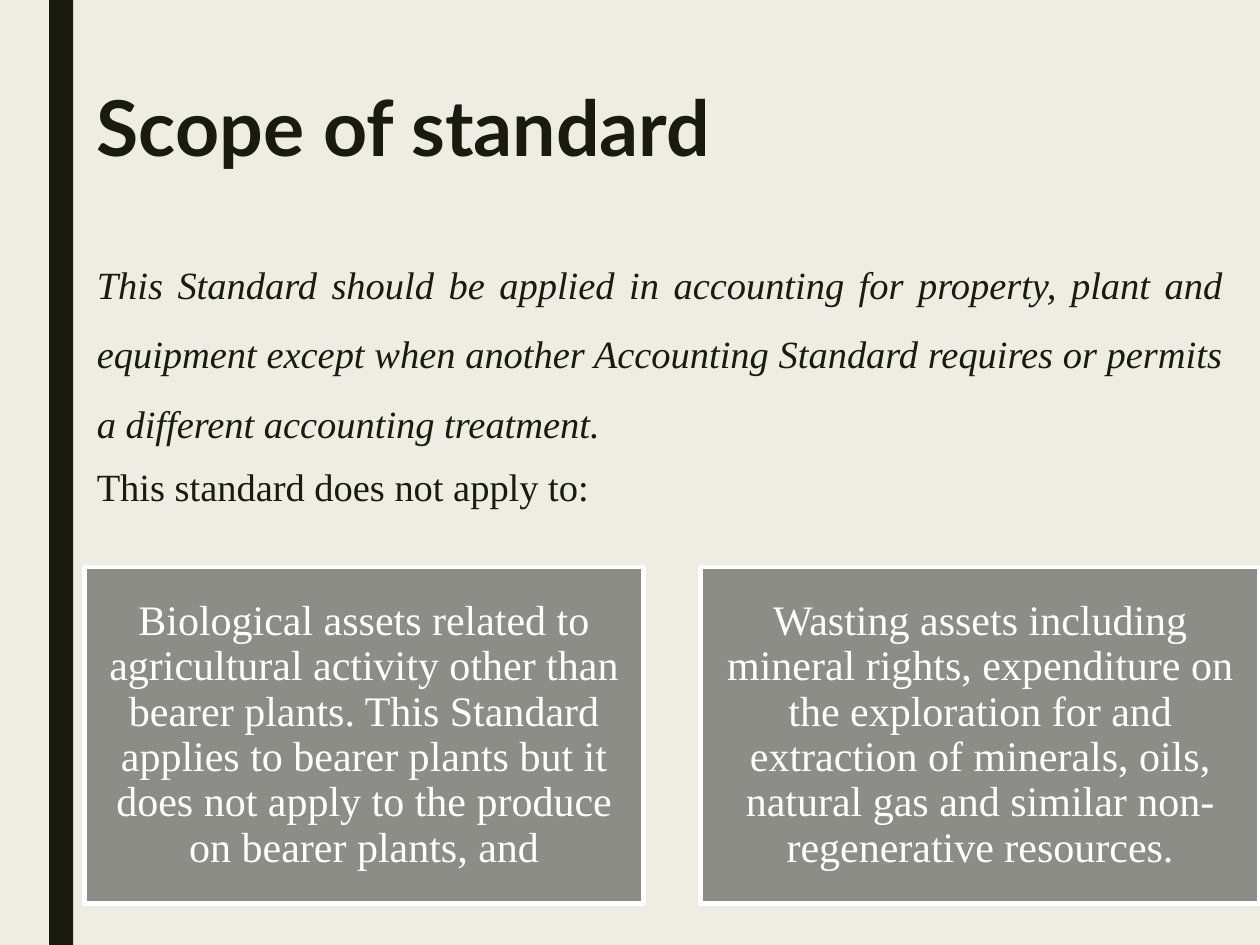
from dataclasses import dataclass
from pptx import Presentation
from pptx.dml.color import RGBColor
from pptx.enum.shapes import MSO_SHAPE
from pptx.enum.text import MSO_ANCHOR, PP_ALIGN
from pptx.util import Inches, Pt


@dataclass(frozen=True)
class Theme:
    paper: str = "EFEDE3"
    ink: str = "191B0E"
    card: str = "8C8D86"
    white: str = "FFFFFF"
    head: str = "Lato"
    serif: str = "Times New Roman"
    title: int = 44
    body: int = 22
    note: int = 24
    edge: float = 2.75


LOOK = Theme()
WIDE, HIGH = 10, 7.5
LEFT = 0.67
CARD, STEP = 4.44, 4.89

TITLE = "Scope of standard"
RULE = ("This Standard should be applied in accounting for property, plant and "
        "equipment except when another Accounting Standard requires or permits "
        "a different accounting treatment.")
LEAD = "This standard does not apply to:"
CARDS = [
    "Biological assets related to agricultural activity other than bearer plants. "
    "This Standard applies to bearer plants but it does not apply to the produce "
    "on bearer plants, and",
    "Wasting assets including mineral rights, expenditure on the exploration for "
    "and extraction of minerals, oils, natural gas and similar non-regenerative "
    "resources.",
]


def color(code):
    return RGBColor.from_string(code)


def write(para, text, face, size, ink, align, gap, bold=False, italic=False):
    para.text = text
    para.alignment = align
    para.line_spacing = gap
    font = para.runs[0].font
    font.name, font.size = face, Pt(size)
    font.bold, font.italic = bold, italic
    font.color.rgb = color(ink)


def add_text(slide, box, anchor):
    frame = slide.shapes.add_textbox(*map(Inches, box)).text_frame
    frame.word_wrap = True
    frame.vertical_anchor = anchor
    return frame


def add_rect(slide, box, fill, line=None):
    rect = slide.shapes.add_shape(MSO_SHAPE.RECTANGLE, *map(Inches, box))
    rect.shadow.inherit = False
    rect.fill.solid()
    rect.fill.fore_color.rgb = color(fill)
    if line:
        rect.line.color.rgb = color(line)
        rect.line.width = Pt(LOOK.edge)
    else:
        rect.line.fill.background()
    return rect


def add_title(slide):
    frame = add_text(slide, (LEFT, 0.67, 6.94, 0.86), MSO_ANCHOR.TOP)
    write(frame.paragraphs[0], TITLE, LOOK.head, LOOK.title, LOOK.ink,
          PP_ALIGN.LEFT, 0.89, bold=True)


def add_body(slide):
    frame = add_text(slide, (LEFT, 1.53, 9.13, 2.88), MSO_ANCHOR.MIDDLE)
    rule, lead = frame.paragraphs[0], frame.add_paragraph()
    write(rule, RULE, LOOK.serif, LOOK.body, LOOK.ink,
          PP_ALIGN.JUSTIFY, 1.5, italic=True)
    write(lead, LEAD, LOOK.serif, LOOK.body, LOOK.ink, PP_ALIGN.JUSTIFY, 0.94)
    for para in (rule, lead):
        para.space_before, para.space_after = Pt(10), Pt(2)


def add_card(slide, col, text):
    box = (LEFT + col * STEP, 4.5, CARD, 2.67)
    frame = add_rect(slide, box, LOOK.card, LOOK.white).text_frame
    frame.word_wrap = True
    frame.vertical_anchor = MSO_ANCHOR.MIDDLE
    frame.margin_left = frame.margin_right = Inches(0.1)
    frame.margin_top = frame.margin_bottom = Inches(0.1)
    write(frame.paragraphs[0], text, LOOK.serif, LOOK.note, LOOK.white,
          PP_ALIGN.CENTER, 0.9)


def main():
    deck = Presentation()
    deck.slide_width, deck.slide_height = Inches(WIDE), Inches(HIGH)
    slide = deck.slides.add_slide(deck.slide_layouts[6])
    fill = slide.background.fill
    fill.solid()
    fill.fore_color.rgb = color(LOOK.paper)
    add_rect(slide, (0.39, 0, 0.19, HIGH), LOOK.ink)
    add_title(slide)
    add_body(slide)
    for col, text in enumerate(CARDS):
        add_card(slide, col, text)
    deck.save("out.pptx")


if __name__ == "__main__":
    main()
